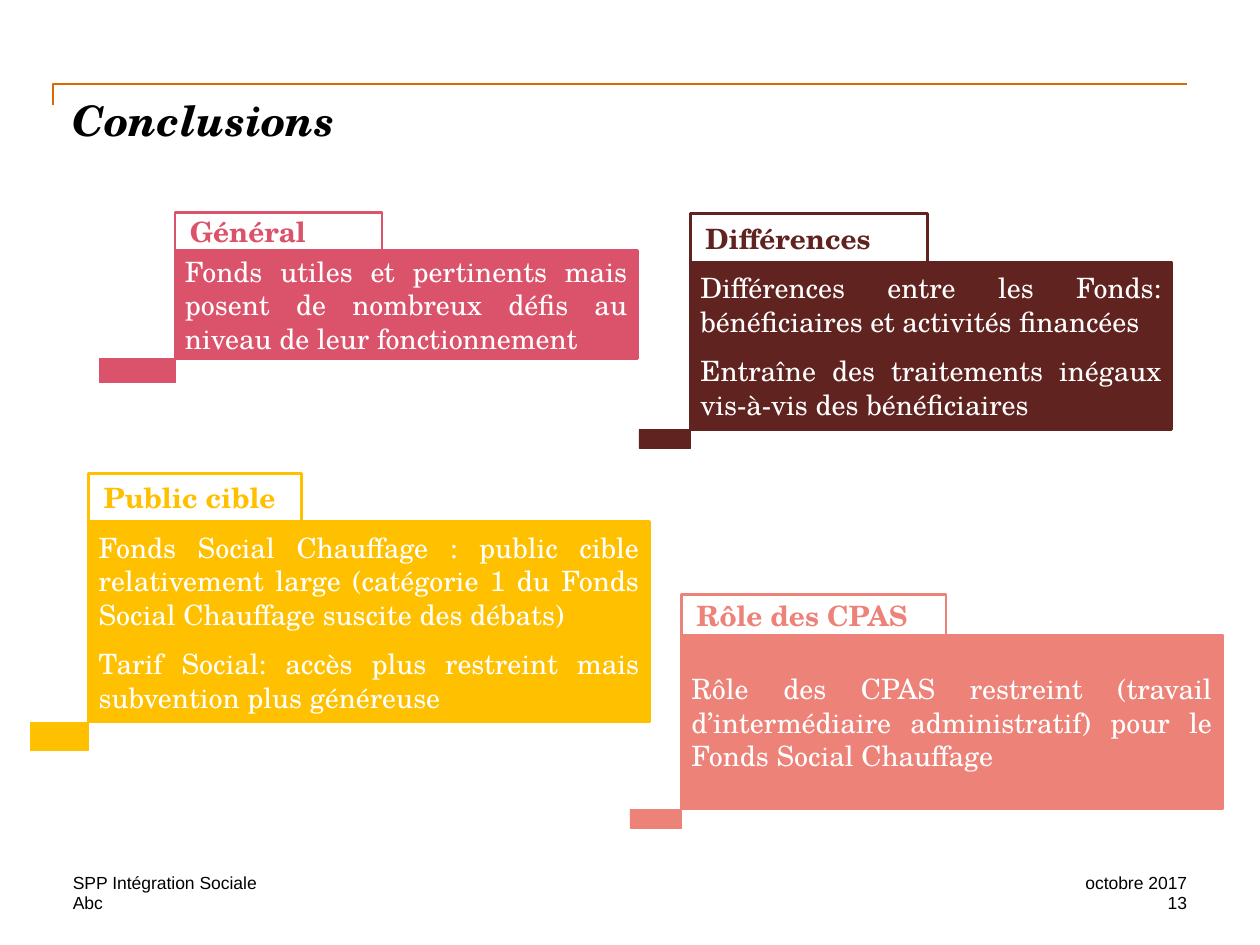
from pptx import Presentation
from pptx.dml.color import RGBColor
from pptx.enum.shapes import MSO_SHAPE
from pptx.enum.text import MSO_ANCHOR, PP_ALIGN
from pptx.util import Cm, Pt

RECT = MSO_SHAPE.RECTANGLE
TOP, MIDDLE, BOTTOM = MSO_ANCHOR.TOP, MSO_ANCHOR.MIDDLE, MSO_ANCHOR.BOTTOM
LEFT, RIGHT, JUSTIFY = PP_ALIGN.LEFT, PP_ALIGN.RIGHT, PP_ALIGN.JUSTIFY

COLORS = {
    "rose": "DB536A", "brown": "602320", "gold": "FFC000", "coral": "ED8278",
    "orange": "DC6900", "white": "FFFFFF", "black": "000000",
}
SERIF = "TeX Gyre Schola"
TITLE = {"name": SERIF, "size": Pt(24), "bold": True, "italic": True}
HEAD = {"name": SERIF, "size": Pt(16), "bold": True}
BODY = {"name": SERIF, "size": Pt(16)}
SMALL = {"name": "Arial", "size": Pt(10)}

# Color, body box, tab size, foot size, heading, paragraphs (cm)
CARDS = [
    ("coral", (13.74, 12.8, 10.9, 3.51), (5.33, 0.81), (1.04, 0.38), "Rôle des CPAS",
     ["Rôle des CPAS restreint (travail d’intermédiaire administratif) "
      "pour le Fonds Social Chauffage"]),
    ("brown", (13.92, 5.28, 9.7, 3.38), (4.78, 0.97), (1.04, 0.38), "Différences",
     ["Différences entre les Fonds: bénéficiaires et activités financées",
      "Entraîne des traitements inégaux vis-à-vis des bénéficiaires"]),
    ("rose", (3.53, 5.05, 9.32, 2.18), (4.17, 0.77), (1.52, 0.48), "Général",
     ["Fonds utiles et pertinents mais posent de nombreux défis "
      "au niveau de leur fonctionnement"]),
    ("gold", (1.79, 10.52, 11.3, 4.04), (4.29, 0.97), (1.17, 0.56), "Public cible",
     ["Fonds Social Chauffage : public cible relativement large "
      "(catégorie 1 du Fonds Social Chauffage suscite des débats)",
      "Tarif Social: accès plus restreint mais subvention plus généreuse"]),
]

# Box (cm), text, alignment, anchor
FOOTER = [
    ((1.47, 17.58, 14.6, 0.43), "SPP Intégration Sociale", LEFT, BOTTOM),
    ((1.47, 17.98, 7.2, 0.43), "Abc", LEFT, TOP),
    ((19.69, 17.58, 4.24, 0.43), "octobre 2017", RIGHT, TOP),
    ((19.69, 17.98, 4.24, 0.43), "13", RIGHT, TOP),
]


def rgb(name):
    return RGBColor.from_string(COLORS[name])


def write(shape, lines, style, color="black", align=LEFT, anchor=TOP,
          inset=(0, 0, 0, 0), after=0):
    frame = shape.text_frame
    frame.word_wrap = True
    frame.vertical_anchor = anchor
    for side, gap in zip(("left", "top", "right", "bottom"), inset):
        setattr(frame, f"margin_{side}", Cm(gap))
    for i, line in enumerate(lines):
        par = frame.add_paragraph() if i else frame.paragraphs[0]
        par.alignment = align
        par.space_after = Pt(after)
        run = par.add_run()
        run.text = line
        for key, value in style.items():
            setattr(run.font, key, value)
        run.font.color.rgb = rgb(color)


def add_text(slide, box, text, style, align=LEFT, anchor=TOP):
    shape = slide.shapes.add_textbox(*map(Cm, box))
    write(shape, [text], style, align=align, anchor=anchor)


def add_rect(slide, box, color, width, solid=True):
    shape = slide.shapes.add_shape(RECT, *map(Cm, box))
    shape.shadow.inherit = False
    if solid:
        shape.fill.solid()
        shape.fill.fore_color.rgb = rgb(color)
    else:
        shape.fill.background()
    shape.line.color.rgb = rgb(color)
    shape.line.width = Pt(width)
    return shape


def add_card(slide, color, box, tab, foot, head, lines):
    x, y, w, h = box
    # Filled body
    body = add_rect(slide, box, color, 1.5)
    write(body, lines, BODY, "white", JUSTIFY, MIDDLE, (0.2, 0.2, 0.2, 0.2), 9)
    # Outlined tab sitting on the body
    label = add_rect(slide, (x, y - tab[1], *tab), color, 1.5, solid=False)
    write(label, [head], HEAD, color, LEFT, MIDDLE, (0.3, 0, 0, 0), 9)
    # Small foot touching the lower left corner
    add_rect(slide, (x - foot[0], y + h, *foot), color, 0.25)


def add_rule(slide):
    pen = slide.shapes.build_freeform(Cm(1.07), Cm(2.11))
    pen.add_line_segments([(Cm(1.07), Cm(1.7)), (Cm(23.93), Cm(1.7))], close=False)
    rule = pen.convert_to_shape()
    rule.shadow.inherit = False
    rule.fill.background()
    rule.line.color.rgb = rgb("orange")
    rule.line.width = Pt(1)


def main():
    deck = Presentation()
    deck.slide_width, deck.slide_height = Cm(25.4), Cm(19.05)
    slide = deck.slides.add_slide(deck.slide_layouts[6])

    # Heading
    add_rule(slide)
    add_text(slide, (1.47, 1.91, 22.43, 2.11), "Conclusions", TITLE)

    # Four conclusions
    for card in CARDS:
        add_card(slide, *card)

    # Footer
    for box, text, align, anchor in FOOTER:
        add_text(slide, box, text, SMALL, align, anchor)

    deck.save("out.pptx")


if __name__ == "__main__":
    main()
